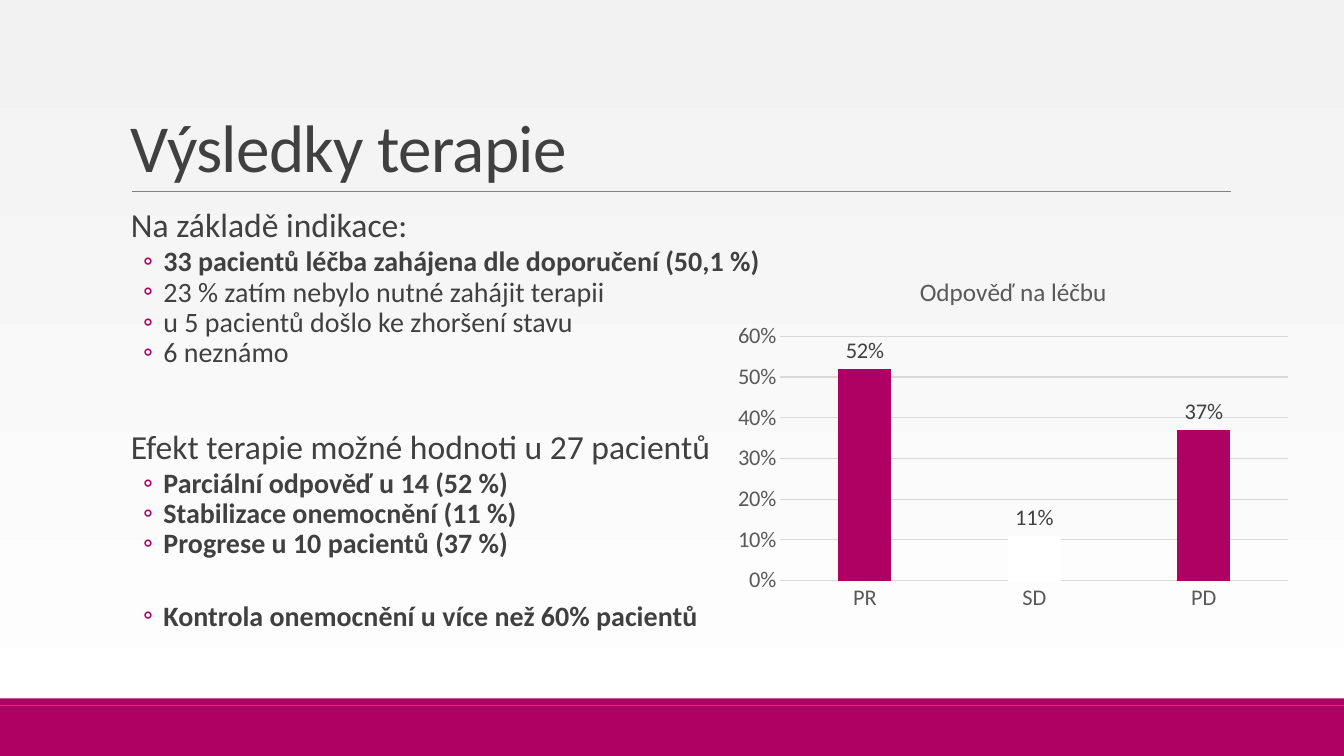
from lxml.etree import SubElement
from pptx import Presentation
from pptx.chart.data import CategoryChartData
from pptx.dml.color import RGBColor
from pptx.enum.chart import XL_CHART_TYPE, XL_LABEL_POSITION, XL_TICK_MARK
from pptx.enum.shapes import MSO_CONNECTOR, MSO_SHAPE
from pptx.enum.text import MSO_ANCHOR
from pptx.oxml.ns import qn
from pptx.util import Cm, Pt

ACCENT = "AF0063"
DARK = "404040"
GRAY = "595959"
GRID = "D9D9D9"

HEADING, PLAIN, STRONG = "heading", "plain", "strong"
RESULTS = [
    (HEADING, "Na základě indikace:", 0),
    (STRONG, "33 pacientů léčba zahájena dle doporučení (50,1 %)", 0),
    (PLAIN, "23 % zatím nebylo nutné zahájit terapii", 0),
    (PLAIN, "u 5 pacientů došlo ke zhoršení stavu", 0),
    (PLAIN, "6 neznámo", 0),
    (HEADING, "Efekt terapie možné hodnoti u 27 pacientů", 44),
    (STRONG, "Parciální odpověď u 14 (52 %)", 0),
    (STRONG, "Stabilizace onemocnění (11 %)", 0),
    (STRONG, "Progrese u 10 pacientů (37 %)", 0),
    (STRONG, "Kontrola onemocnění u více než 60% pacientů", 30),
]


def color(value):
    return RGBColor.from_string(value)


class SlideBuilder:
    def __init__(self, page, font="Calibri"):
        self.page = page
        self.font = font

    def style(self, font, size, value, bold=False):
        font.name = self.font
        font.size = Pt(size)
        font.bold = bold
        font.color.rgb = color(value)

    def background(self, top, bottom):
        fill = self.page.background.fill
        fill.gradient()
        fill.gradient_angle = 270
        for stop, value in zip(fill.gradient_stops, (top, bottom)):
            stop.color.rgb = color(value)

    def band(self, left, top, width, height):
        shape = self.page.shapes.add_shape(
            MSO_SHAPE.RECTANGLE, Cm(left), Cm(top), Cm(width), Cm(height))
        shape.shadow.inherit = False
        shape.fill.solid()
        shape.fill.fore_color.rgb = color(ACCENT)
        shape.line.fill.background()

    def rule(self, left, right, top):
        line = self.page.shapes.add_connector(
            MSO_CONNECTOR.STRAIGHT, Cm(left), Cm(top), Cm(right), Cm(top))
        line.line.color.rgb = color("808080")
        line.line.width = Pt(0.5)
        SubElement(line._element.spPr, qn("a:effectLst"))

    def text_box(self, left, top, width, height):
        box = self.page.shapes.add_textbox(Cm(left), Cm(top), Cm(width), Cm(height))
        box.text_frame.word_wrap = True
        return box.text_frame

    def title(self, text, *place):
        frame = self.text_box(*place)
        frame.vertical_anchor = MSO_ANCHOR.BOTTOM
        frame.text = text
        para = frame.paragraphs[0]
        para.line_spacing = 0.85
        span = para.runs[0]
        self.style(span.font, 48, DARK)
        span._r.get_or_add_rPr().set("spc", "-50")

    def bullet(self, para):
        properties = para._p.get_or_add_pPr()
        properties.set("marL", str(Cm(1.07)))
        properties.set("indent", str(-Cm(0.51)))
        bullet_color = SubElement(properties, qn("a:buClr"))
        SubElement(bullet_color, qn("a:srgbClr"), val=ACCENT)
        SubElement(properties, qn("a:buFont"), typeface=self.font)
        SubElement(properties, qn("a:buChar"), char="◦")

    def body(self, entries, *place):
        frame = self.text_box(*place)
        frame.margin_left = frame.margin_right = 0
        for index, (kind, text, gap) in enumerate(entries):
            para = frame.add_paragraph() if index else frame.paragraphs[0]
            para.text = text
            para.line_spacing = 0.9
            para.space_before = Pt(gap)
            para.space_after = Pt(2 if kind == HEADING else 0)
            if kind == HEADING:
                para._p.get_or_add_pPr().set("marL", str(Cm(0.25)))
            else:
                self.bullet(para)
            size = 24 if kind == HEADING else 20
            self.style(para.runs[0].font, size, DARK, kind == STRONG)

    def column_chart(self, title, values, bar_colors, *place):
        data = CategoryChartData(number_format="0%")
        data.categories = list(values)
        data.add_series("Series 1", list(values.values()))
        left, top, width, height = map(Cm, place)
        chart = self.page.shapes.add_chart(
            XL_CHART_TYPE.COLUMN_CLUSTERED, left, top, width, height, data).chart
        self.style(chart.font, 16, GRAY)
        chart.has_legend = False
        chart.has_title = True
        chart.chart_title.include_in_layout = False
        heading = chart.chart_title.text_frame
        heading.text = title
        self.style(heading.paragraphs[0].runs[0].font, 18, GRAY)

        for axis in (chart.category_axis, chart.value_axis):
            axis.major_tick_mark = axis.minor_tick_mark = XL_TICK_MARK.NONE
            self.style(axis.tick_labels.font, 16, GRAY)
        chart.category_axis.format.line.color.rgb = color(GRID)
        chart.category_axis.format.line.width = Pt(0.75)
        value_axis = chart.value_axis
        value_axis.minimum_scale, value_axis.maximum_scale = 0, 0.6
        value_axis.major_unit = 0.1
        value_axis.tick_labels.number_format = "0%"
        value_axis.tick_labels.number_format_is_linked = False
        value_axis.format.line.fill.background()
        value_axis.major_gridlines.format.line.color.rgb = color(GRID)
        value_axis.major_gridlines.format.line.width = Pt(0.75)

        plot = chart.plots[0]
        plot.vary_by_categories = False
        plot.gap_width = 219
        plot.overlap = -27
        series = plot.series[0]
        for index, value in enumerate(bar_colors):
            fill = series.points[index].format.fill
            fill.solid()
            fill.fore_color.rgb = color(value)
        labels = series.data_labels
        labels.show_value = True
        labels.position = XL_LABEL_POSITION.OUTSIDE_END
        labels.number_format = "0%"
        labels.number_format_is_linked = False
        self.style(labels.font, 16, DARK)


def main():
    deck = Presentation()
    deck.slide_width, deck.slide_height = Cm(33.87), Cm(19.05)
    builder = SlideBuilder(deck.slides.add_slide(deck.slide_layouts[6]))
    builder.background("F2F2F2", "FFFFFF")
    builder.band(0, 17.78, 33.87, 1.27)
    builder.band(0, 17.6, 33.87, 0.18)
    builder.rule(3.33, 31.01, 4.83)
    builder.title("Výsledky terapie", 3.05, 0.79, 27.94, 4.03)
    builder.body(RESULTS, 3.05, 5.13, 27.94, 11.18)
    builder.column_chart(
        "Odpověď na léčbu", {"PR": 0.52, "SD": 0.11, "PD": 0.37},
        (ACCENT, "FFFFFF", ACCENT), 18.31, 6.48, 14.45, 9.12)
    deck.save("out.pptx")


if __name__ == "__main__":
    main()
